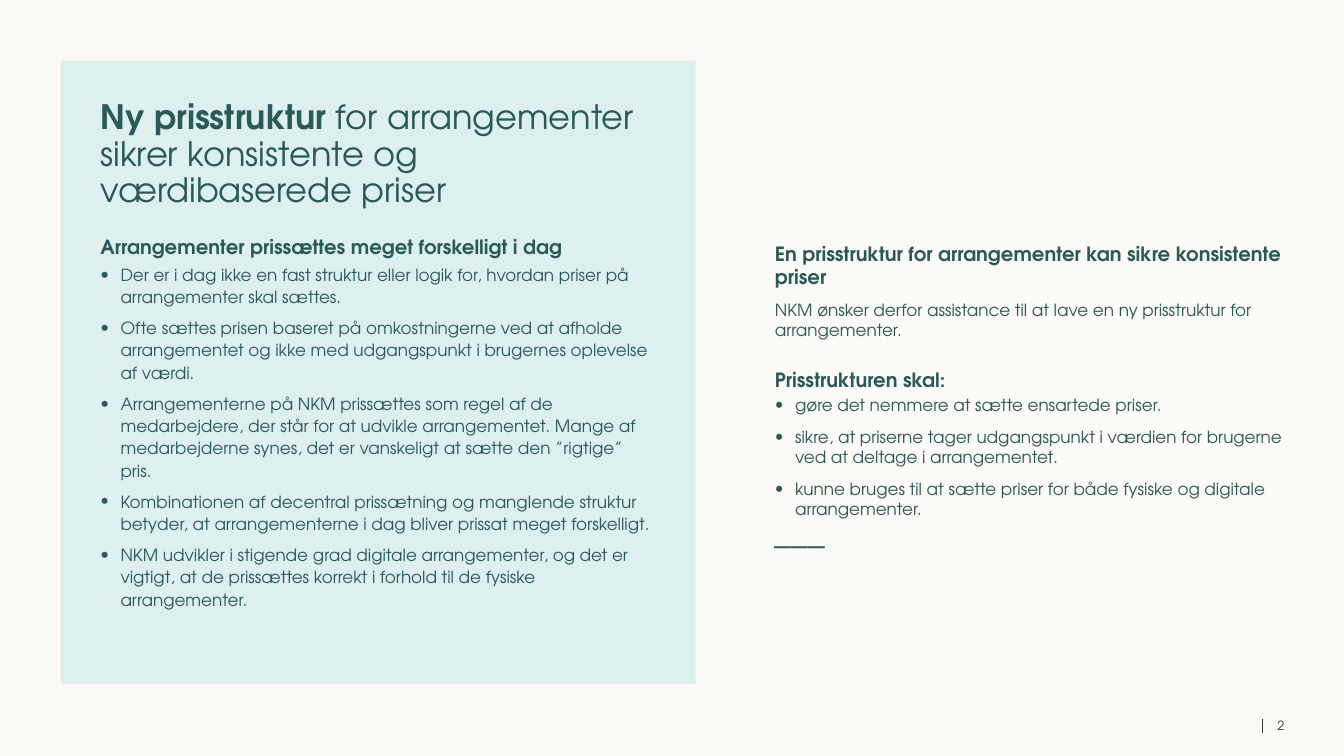
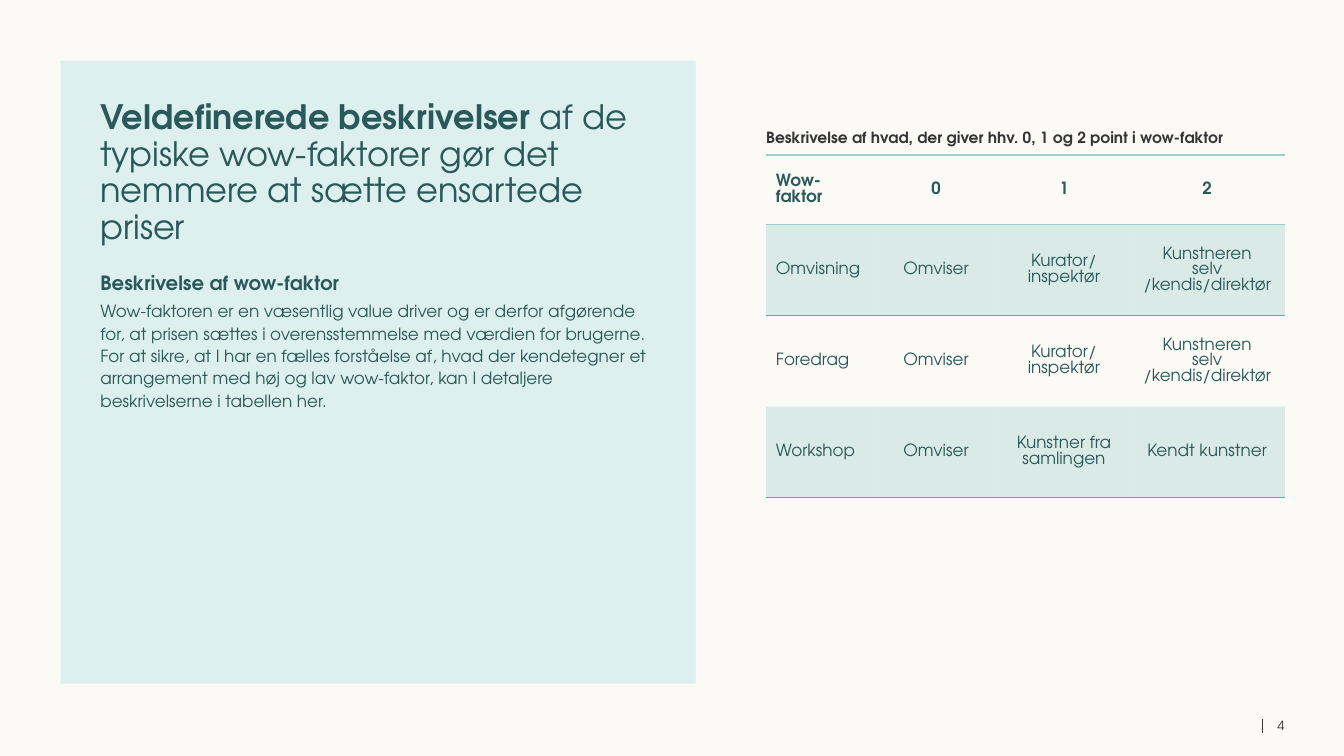
from dataclasses import dataclass

import pptx
import pptx.dml.color
import pptx.enum.shapes
import pptx.enum.text
import pptx.oxml.ns
import pptx.util
from lxml import etree

Pt = pptx.util.Pt
qn = pptx.oxml.ns.qn
ALIGN = pptx.enum.text.PP_ALIGN
ANCHOR = pptx.enum.text.MSO_ANCHOR


@dataclass(frozen=True)
class Theme:
    font: str = "TeX Gyre Adventor"
    # Colours
    page: str = "FCFAF6"
    panel: str = "DDEFEF"
    text: str = "295958"
    footer: str = "373636"
    caption: str = "323435"
    band: str = "54B0AF"
    head_rule: str = "98D0CF"
    # Type sizes
    title_size: int = 24
    heading_size: int = 14
    body_size: int = 12
    caption_size: int = 11
    footer_size: int = 9
    # Line pitches
    title_line: int = 26
    body_line: int = 16


T = Theme()

# Shared geometry: left panel, its inset, and the right-hand margin
PANEL_X, PANEL_Y, PANEL_W, PANEL_H = 43.4, 43.3, 453.6, 445
INSET = 28.3
RIGHT_EDGE = 917.5


def rgb(value):
    return pptx.dml.color.RGBColor.from_string(value)


# Text

def add_text(tf, text, *, lead="", size=T.body_size, bold=False, color=T.text,
             align=ALIGN.LEFT, before=0, line=None, bullet=False):
    """Write one paragraph; lead is an opening in bold."""
    p = tf.paragraphs[0]
    if p.runs:
        p = tf.add_paragraph()
    if bullet:
        add_bullet(p, color)
    p.alignment = align
    p.space_before = Pt(before)
    if line is not None:
        p.line_spacing = line
    for part, weight in ((lead, True), (text, bold)):
        if part:
            r = p.add_run()
            r.text = part
            r.font.name = T.font
            r.font.size = Pt(size)
            r.font.bold = weight
            r.font.color.rgb = rgb(color)


def add_bullet(p, color):
    pPr = p._p.get_or_add_pPr()
    pPr.set("marL", str(Pt(14.4)))
    pPr.set("indent", str(-Pt(14.4)))
    buClr = etree.SubElement(pPr, qn("a:buClr"))
    etree.SubElement(buClr, qn("a:srgbClr"), val=color)
    etree.SubElement(pPr, qn("a:buFont"), typeface=T.font)
    etree.SubElement(pPr, qn("a:buChar"), char="•")


def set_frame(tf, anchor):
    tf.word_wrap = True
    tf.auto_size = pptx.enum.text.MSO_AUTO_SIZE.NONE
    tf.vertical_anchor = anchor
    tf.margin_left = tf.margin_top = tf.margin_right = tf.margin_bottom = 0
    return tf


def add_box(s, x, y, w, h, anchor=ANCHOR.TOP):
    box = s.shapes.add_textbox(Pt(x), Pt(y), Pt(w), Pt(h))
    return set_frame(box.text_frame, anchor)


def add_heading(tf, text, before=0):
    add_text(tf, text, size=T.heading_size, bold=True, before=before)


# Slide frame

def add_panel(s):
    sp = s.shapes.add_shape(pptx.enum.shapes.MSO_SHAPE.RECTANGLE,
                            Pt(PANEL_X), Pt(PANEL_Y), Pt(PANEL_W), Pt(PANEL_H))
    sp.shadow.inherit = False
    sp.fill.solid()
    sp.fill.fore_color.rgb = rgb(T.panel)
    sp.line.fill.background()
    # The title placeholder lies on top of the panel
    s.shapes._spTree.remove(sp._element)
    s.shapes._spTree.insert(2, sp._element)


def add_footer(s, number):
    tf = add_box(s, RIGHT_EDGE - 41, 512.6, 41, 11, ANCHOR.MIDDLE)
    add_text(tf, number, size=T.footer_size, color=T.footer, align=ALIGN.RIGHT)
    rule = s.shapes.add_connector(pptx.enum.shapes.MSO_CONNECTOR.STRAIGHT,
                                  Pt(901.5), Pt(513.4), Pt(901.5), Pt(523.4))
    rule.line.color.rgb = rgb(T.footer)
    rule.line.width = Pt(0.25)
    etree.SubElement(rule._element.spPr, qn("a:effectLst"))


def add_slide(prs, number, lead, title, title_lines):
    """Make a slide with panel, title and footer; return it and its panel text."""
    s = prs.slides.add_slide(prs.slide_layouts[5])
    add_panel(s)
    x, y, w = PANEL_X + INSET, PANEL_Y + INSET, PANEL_W - 2 * INSET
    h = title_lines * T.title_line
    sp = s.shapes.title
    sp.left, sp.top, sp.width, sp.height = Pt(x), Pt(y), Pt(w), Pt(h)
    add_text(set_frame(sp.text_frame, ANCHOR.TOP), title, lead=lead,
             size=T.title_size, line=Pt(T.title_line))
    body_y = y + h + 18
    tf = add_box(s, x, body_y, w, PANEL_Y + PANEL_H - INSET - body_y)
    add_footer(s, number)
    return s, tf


# Table

def set_rule(cell, tag, color, width):
    ln = etree.Element(qn(tag), w=str(Pt(width) if color else 0))
    if color:
        fill = etree.SubElement(ln, qn("a:solidFill"))
        etree.SubElement(fill, qn("a:srgbClr"), val=color)
    else:
        etree.SubElement(ln, qn("a:noFill"))
    cell._tc.get_or_add_tcPr().insert(0, ln)


def set_band(cell, banded):
    if not banded:
        cell.fill.background()
        return
    cell.fill.solid()
    cell.fill.fore_color.rgb = rgb(T.band)
    clr = cell._tc.tcPr.find(".//" + qn("a:srgbClr"))
    etree.SubElement(clr, qn("a:alpha"), val="20000")


def add_table(s, x, y, widths, heights, rows, rules):
    """Draw rows; rules holds colour and width of each horizontal grid line."""
    frame = s.shapes.add_table(len(rows), len(widths), Pt(x), Pt(y),
                               Pt(sum(widths)), Pt(sum(heights)))
    table = frame.table
    table.first_row = table.horz_banding = False
    style = table._tbl.tblPr.find(qn("a:tableStyleId"))
    style.text = "{2D5ABB26-0587-4C30-8999-92F81FD0307C}"
    for column, width in zip(table.columns, widths):
        column.width = Pt(width)
    for i, (row, height) in enumerate(zip(rows, heights)):
        table.rows[i].height = Pt(height)
        for j, text in enumerate(row):
            cell = table.cell(i, j)
            cell.vertical_anchor = ANCHOR.MIDDLE
            add_text(cell.text_frame, text, bold=i == 0,
                     align=ALIGN.CENTER if j else ALIGN.LEFT)
            set_band(cell, i % 2 == 1)
            set_rule(cell, "a:lnB", *rules[i + 1])
            set_rule(cell, "a:lnT", *rules[i])


# Slides

def price_structure(prs):
    s, tf = add_slide(prs, "2", "Ny prisstruktur ",
                      "for arrangementer sikrer konsistente og værdibaserede priser", 3)
    add_heading(tf, "Arrangementer prissættes meget forskelligt i dag")
    today = [
        "Der er i dag ikke en fast struktur eller logik for, hvordan priser på "
        "arrangementer skal sættes.",
        "Ofte sættes prisen baseret på omkostningerne ved at afholde arrangementet "
        "og ikke med udgangspunkt i brugernes oplevelse af værdi.",
        "Arrangementerne på NKM prissættes som regel af de medarbejdere, der står for "
        "at udvikle arrangementet. Mange af medarbejderne synes, det er vanskeligt at "
        "sætte den ”rigtige” pris.",
        "Kombinationen af decentral prissætning og manglende struktur betyder, at "
        "arrangementerne i dag bliver prissat meget forskelligt.",
        "NKM udvikler i stigende grad digitale arrangementer, og det er vigtigt, at de "
        "prissættes korrekt i forhold til de fysiske arrangementer.",
    ]
    for i, text in enumerate(today):
        add_text(tf, text, bullet=True, line=Pt(T.body_line), before=6 if i else 3)

    # Right column
    x = 553.5
    tf = add_box(s, x, 172.6, RIGHT_EDGE - x, 230)
    add_heading(tf, "En prisstruktur for arrangementer kan sikre konsistente priser")
    add_text(tf, "NKM ønsker derfor assistance til at lave en ny prisstruktur for "
                 "arrangementer.", before=8)
    add_heading(tf, "Prisstrukturen skal:", before=20)
    goals = [
        "gøre det nemmere at sætte ensartede priser.",
        "sikre, at priserne tager udgangspunkt i værdien for brugerne ved at deltage "
        "i arrangementet.",
        "kunne bruges til at sætte priser for både fysiske og digitale arrangementer.",
    ]
    for i, text in enumerate(goals):
        add_text(tf, text, bullet=True, before=8.5 if i else 2)
    add_text(tf, "___", size=T.title_size, align=ALIGN.JUSTIFY, line=Pt(18), before=5)


def wow_factors(prs):
    s, tf = add_slide(prs, "4", "Veldefinerede beskrivelser ",
                      "af de typiske wow-faktorer gør det nemmere at sætte "
                      "ensartede priser", 4)
    add_heading(tf, "Beskrivelse af wow-faktor")
    add_text(tf, "Wow-faktoren er en væsentlig value driver og er derfor afgørende for, "
                 "at prisen sættes i overensstemmelse med værdien for brugerne. For at "
                 "sikre, at I har en fælles forståelse af, hvad der kendetegner et "
                 "arrangement med høj og lav wow-faktor, kan I detaljere beskrivelserne "
                 "i tabellen her.", line=Pt(T.body_line), before=3)

    # Scoring table with its caption
    x = 547.2
    tf = add_box(s, x, 85.6, RIGHT_EDGE - x, 25, ANCHOR.MIDDLE)
    add_text(tf, "Beskrivelse af hvad, der giver hhv. 0, 1 og 2 point i wow-faktor",
             size=T.caption_size, bold=True, color=T.caption)
    celebrity = "Kunstneren selv /kendis/direktør"
    rows = [
        ["Wow-faktor", "0", "1", "2"],
        ["Omvisning", "Omviser", "Kurator/ inspektør", celebrity],
        ["Foredrag", "Omviser", "Kurator/ inspektør", celebrity],
        ["Workshop", "Omviser", "Kunstner fra samlingen", "Kendt kunstner"],
    ]
    rules = [(T.head_rule, 1.5), (T.head_rule, 1), (T.band, 1), (None, 0), (T.band, 1)]
    add_table(s, 547, 110.9, [77, 89.2, 93.6, 111], [49.5, 65, 65, 65], rows, rules)


def main():
    prs = pptx.Presentation()
    prs.slide_width, prs.slide_height = Pt(960), Pt(540)
    background = prs.slide_master.background.fill
    background.solid()
    background.fore_color.rgb = rgb(T.page)
    price_structure(prs)
    wow_factors(prs)
    prs.save("out.pptx")


if __name__ == "__main__":
    main()
